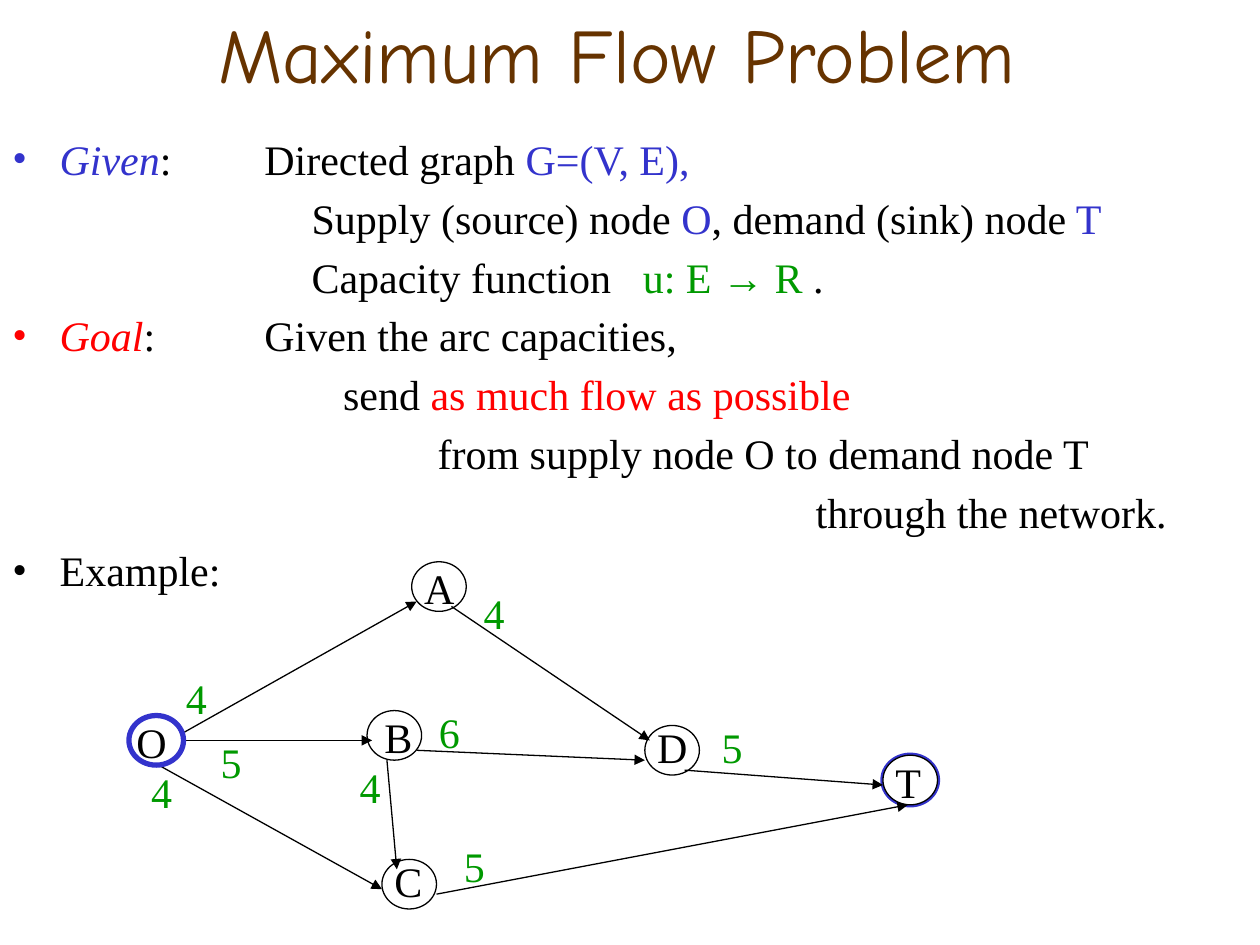
from dataclasses import dataclass

from lxml import etree
from pptx import Presentation
from pptx.dml.color import RGBColor
from pptx.enum import shapes, text
from pptx.oxml import ns
from pptx.util import Emu, Inches, Pt

BLACK, BLUE, GREEN, RED, BROWN = "000000", "3333CC", "009900", "FF0000", "663300"
WHITE = "FFFFFF"
SERIF, COMIC = "Times New Roman", "Comic Neue"
COLUMNS = 254
ROW_OFFSET = Inches(0.01)
INDENT = Inches(0.375)
TAB = Inches(1)

deck = Presentation()
deck.slide_width, deck.slide_height = Inches(10), Inches(7.5)
slide = deck.slides.add_slide(deck.slide_layouts[6])
cell = deck.slide_width / COLUMNS


@dataclass(frozen=True)
class Span:
    words: str
    color: str = BLACK
    italic: bool = False
    size: float = 24
    font: str = SERIF


@dataclass(frozen=True)
class Line:
    spans: tuple[Span, ...]
    bulleted: bool = False


@dataclass(frozen=True)
class Node:
    name: str
    col: float
    row: float
    name_col: float
    name_row: float


@dataclass(frozen=True)
class Arc:
    start: tuple[float, float]
    end: tuple[float, float]
    capacity: str = ""
    label: tuple[float, float] = (0, 0)


def rgb(color: str) -> RGBColor:
    return RGBColor.from_string(color)


def x(col: float) -> Emu:
    return Emu(round(col * cell))


def y(row: float) -> Emu:
    return Emu(round(row * cell) + ROW_OFFSET)


def add_frame(left: int, top: int, width: int, height: int):
    frame = slide.shapes.add_textbox(left, top, width, height).text_frame
    frame.word_wrap = True
    return frame


def add_span(paragraph, span: Span) -> None:
    run = paragraph.add_run()
    run.text = span.words
    run.font.name = span.font
    run.font.size = Pt(span.size)
    run.font.italic = span.italic
    run.font.color.rgb = rgb(span.color)


def add_line(paragraph, line: Line) -> None:
    paragraph.space_before = Pt(4.8)
    properties = paragraph._p.get_or_add_pPr()
    properties.set("marL", str(INDENT))
    properties.set("indent", str(-INDENT))
    properties.set("defTabSz", str(TAB))
    if line.bulleted:
        etree.SubElement(properties, ns.qn("a:buFont")).set("typeface", SERIF)
        etree.SubElement(properties, ns.qn("a:buChar")).set("char", "•")
    else:
        etree.SubElement(properties, ns.qn("a:buNone"))
    for span in line.spans:
        add_span(paragraph, span)


def add_label(span: Span, col: float, row: float) -> None:
    frame = add_frame(x(col), y(row), x(11), Inches(0.5))
    frame.paragraphs[0].space_before = Pt(2)
    add_span(frame.paragraphs[0], span)


def add_circle(node: Node, color: str, weight: float) -> None:
    circle = slide.shapes.add_shape(
        shapes.MSO_SHAPE.OVAL, x(node.col), y(node.row), x(11), x(10))
    circle.shadow.inherit = False
    circle.fill.solid()
    circle.fill.fore_color.rgb = rgb(WHITE)
    circle.line.color.rgb = rgb(color)
    circle.line.width = Pt(weight)


def add_arc(arc: Arc) -> None:
    (left, top), (right, bottom) = arc.start, arc.end
    arrow = slide.shapes.add_connector(
        shapes.MSO_CONNECTOR.STRAIGHT, x(left), y(top), x(right), y(bottom))
    arrow.line.color.rgb = rgb(BLACK)
    arrow.line.width = Pt(0.75)
    etree.SubElement(arrow.line._get_or_add_ln(), ns.qn("a:tailEnd")).set("type", "triangle")
    etree.SubElement(arrow._element.spPr, ns.qn("a:effectLst"))


LINES = (
    Line((Span("Given", BLUE, True), Span(":\tDirected graph "), Span("G=(V, E),", BLUE)), True),
    Line((Span("\t\t\tSupply (source) node"), Span(" O", BLUE),
          Span(", demand (sink) node"), Span(" T", BLUE))),
    Line((Span("\t\t\tCapacity function   "), Span("u: E → R", GREEN), Span(" ."))),
    Line((Span("Goal", RED, True), Span(":\tGiven the arc capacities,")), True),
    Line((Span("\t\t\t   send "), Span("as much flow as possible", RED))),
    Line((Span("\t\t\t\tfrom supply node O to demand node T"),)),
    Line((Span("\t\t\t\t\t\t\tthrough the network."),)),
    Line((Span("Example:"),), True),
)
SOURCE = Node("O", 26, 144, 25, 143)
SINK = Node("T", 178, 152, 178, 151)
INNER = (
    Node("D", 130, 146, 130, 144),
    Node("B", 74, 143, 75, 142),
    Node("C", 77, 173, 77, 171),
    Node("A", 83, 113, 83, 112),
)
ARCS = (
    Arc((78, 153), (80, 175), "4", (70, 152)),
    Arc((36, 148), (84, 121), "4", (35, 134)),
    Arc((37, 149), (75, 149), "5", (42, 147)),
    Arc((84, 151), (130, 153), "6", (86, 141)),
    Arc((138, 155), (178, 158), "5", (143, 144)),
    Arc((91, 122), (131, 149), "4", (95, 117)),
    Arc((88, 180), (183, 162), "5", (91, 168)),
    Arc((32, 154), (77, 179), "4", (28, 153)),
)

title = add_frame(Inches(0.43), 0, Inches(8.94), Inches(0.84))
title.vertical_anchor = text.MSO_ANCHOR.MIDDLE
title.paragraphs[0].alignment = text.PP_ALIGN.CENTER
add_span(title.paragraphs[0], Span("Maximum Flow Problem", BROWN, size=44, font=COMIC))

body = add_frame(0, Inches(1.01), deck.slide_width, Inches(6.49))
for index, line in enumerate(LINES):
    add_line(body.add_paragraph() if index else body.paragraphs[0], line)

add_circle(SINK, BLUE, 3)
for node in (*INNER, SINK):
    add_circle(node, BLACK, 0.75)
for arc in ARCS:
    add_arc(arc)
    add_label(Span(arc.capacity, GREEN), *arc.label)
add_circle(SOURCE, BLUE, 3)
for node in (SOURCE, *INNER, SINK):
    add_label(Span(node.name), node.name_col, node.name_row)

deck.save("out.pptx")
